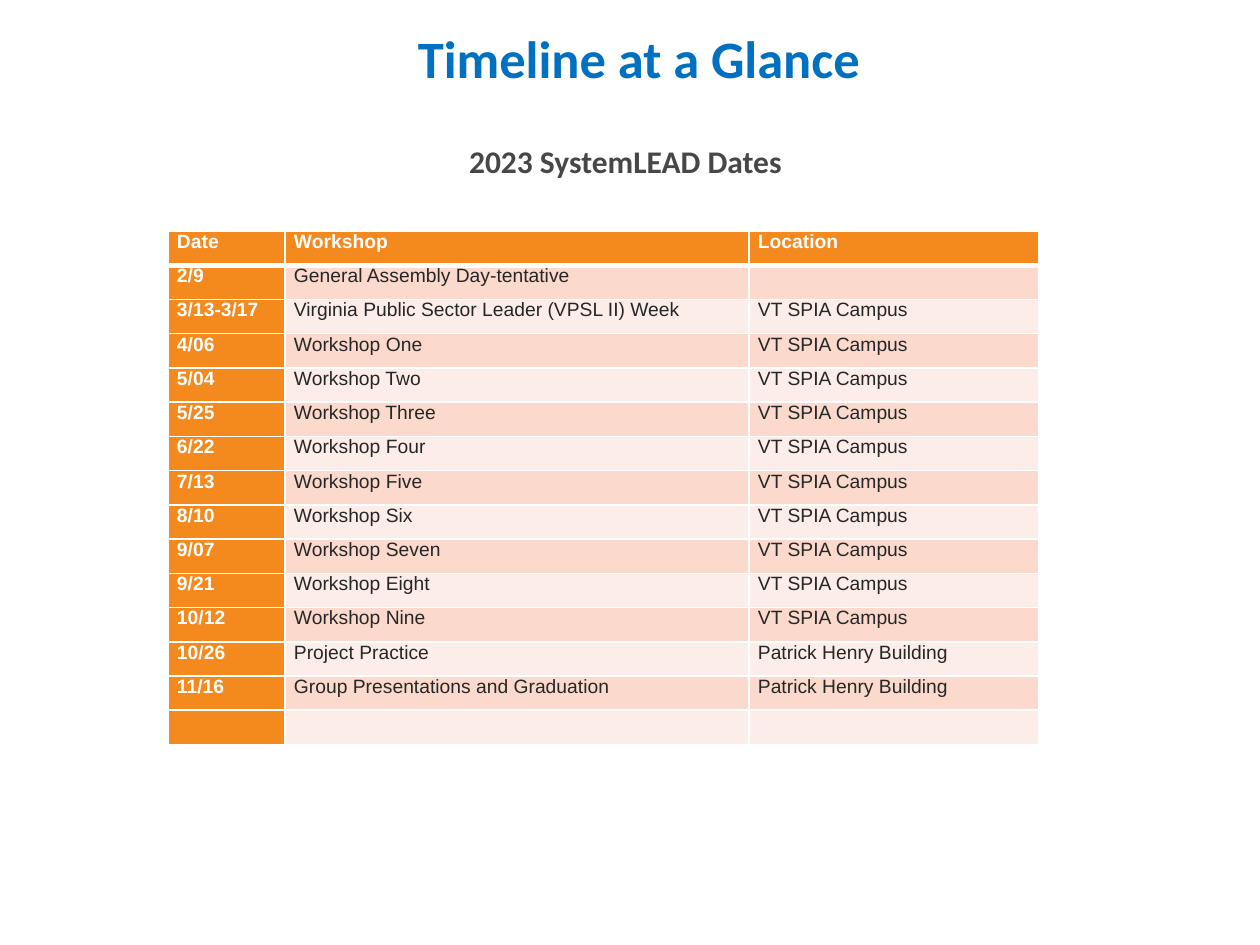
from pptx import Presentation
from pptx.dml.color import RGBColor as RGB
from pptx.enum.text import MSO_ANCHOR as ANCHOR, MSO_AUTO_SIZE as FIT, PP_ALIGN as ALIGN
from pptx.oxml.ns import qn
from pptx.util import Emu, Pt
from lxml.etree import SubElement

COLORS = {"title": "0070C0", "subtitle": "474747", "accent": "F4891E", "white": "FFFFFF",
          "text": "262626", "odd": "FBDACD", "even": "FDEDE8"}
CAMPUS, HENRY = "VT SPIA Campus", "Patrick Henry Building"
NUMBERS = ["One", "Two", "Three", "Four", "Five", "Six", "Seven", "Eight", "Nine"]
DATES = ["4/06", "5/04", "5/25", "6/22", "7/13", "8/10", "9/07", "9/21", "10/12"]
ROWS = [
    ("Date", "Workshop", "Location"),
    ("2/9", "General Assembly Day-tentative", ""),
    ("3/13-3/17", "Virginia Public Sector Leader (VPSL II) Week", CAMPUS),
    *[(d, f"Workshop {n}", CAMPUS) for d, n in zip(DATES, NUMBERS)],
    ("10/26", "Project Practice", HENRY),
    ("11/16", "Group Presentations and Graduation", HENRY),
    ("", "", ""),
]


def px(n):
    return Emu(round(n * 914400 / 126))


def color(name):
    return RGB.from_string(COLORS[name])


class Deck:
    """Holds the presentation style and the current slide."""

    def __init__(self):
        self.prs = Presentation()
        self.prs.slide_width, self.prs.slide_height = px(1260), px(945)
        self.s = self.prs.slides.add_slide(self.prs.slide_layouts[1])

    def run(self, p, text, size, font, fill, bold):
        r = p.add_run()
        r.text = text
        r.font.size, r.font.name, r.font.bold = Pt(size), font, bold
        r.font.color.rgb = color(fill)

    def placeholder(self, idx, box, text, size, fill, anchor):
        sp = self.s.placeholders[idx]
        sp.left, sp.top, sp.width, sp.height = map(px, box)
        tf = sp.text_frame
        tf.word_wrap, tf.auto_size, tf.vertical_anchor = True, FIT.NONE, anchor
        p = tf.paragraphs[0]
        p.alignment, p.space_before = ALIGN.CENTER, Pt(0)
        pPr = p._p.get_or_add_pPr()
        pPr.set("marL", "0")
        pPr.set("indent", "0")
        SubElement(pPr, qn("a:buNone"))
        self.run(p, text, size, "Calibri", fill, True)

    def borders(self, cell, top, bottom):
        tcPr = cell._tc.get_or_add_tcPr()
        for i, (side, width) in enumerate(zip("LRTB", (1, 1, top, bottom))):
            ln = SubElement(tcPr, qn(f"a:ln{side}"), w=str(Pt(width)))
            SubElement(SubElement(ln, qn("a:solidFill")), qn("a:srgbClr"), val=COLORS["white"])
            tcPr.insert(i, ln)

    def cell(self, cell, text, row, col):
        strong = row == 0 or col == 0
        cell.margin_left = cell.margin_right = px(9)
        cell.margin_top = cell.margin_bottom = 0
        cell.fill.solid()
        cell.fill.fore_color.rgb = color("accent" if strong else "odd" if row % 2 else "even")
        self.borders(cell, 3 if row == 1 else 1, 3 if row == 0 else 1)
        p = cell.text_frame.paragraphs[0]
        if text:
            self.run(p, text, 11, "Arial", "white" if strong else "text", strong)
        else:
            p._p.get_or_add_endParaRPr().set("sz", "1100")

    def table(self, left, top, widths, height, rows):
        gf = self.s.shapes.add_table(len(rows), len(widths), px(left), px(top),
                                     px(sum(widths)), px(height))
        tbl = gf.table
        tbl.horz_banding, tbl.first_col = False, True
        for col, w in zip(tbl.columns, widths):
            col.width = px(w)
        for i, row in enumerate(rows):
            tbl.rows[i].height = px(height / len(rows))
            for j, text in enumerate(row):
                self.cell(tbl.cell(i, j), text, i, j)


def main():
    deck = Deck()
    deck.placeholder(0, (73, 10, 1144, 95), "Timeline at a Glance ", 30, "title", ANCHOR.MIDDLE)
    deck.placeholder(1, (32, 136, 1187, 725), "2023 SystemLEAD Dates", 18, "subtitle", ANCHOR.TOP)
    deck.table(168, 231, (117, 464, 290), 514, ROWS)
    deck.prs.save("out.pptx")


if __name__ == "__main__":
    main()
